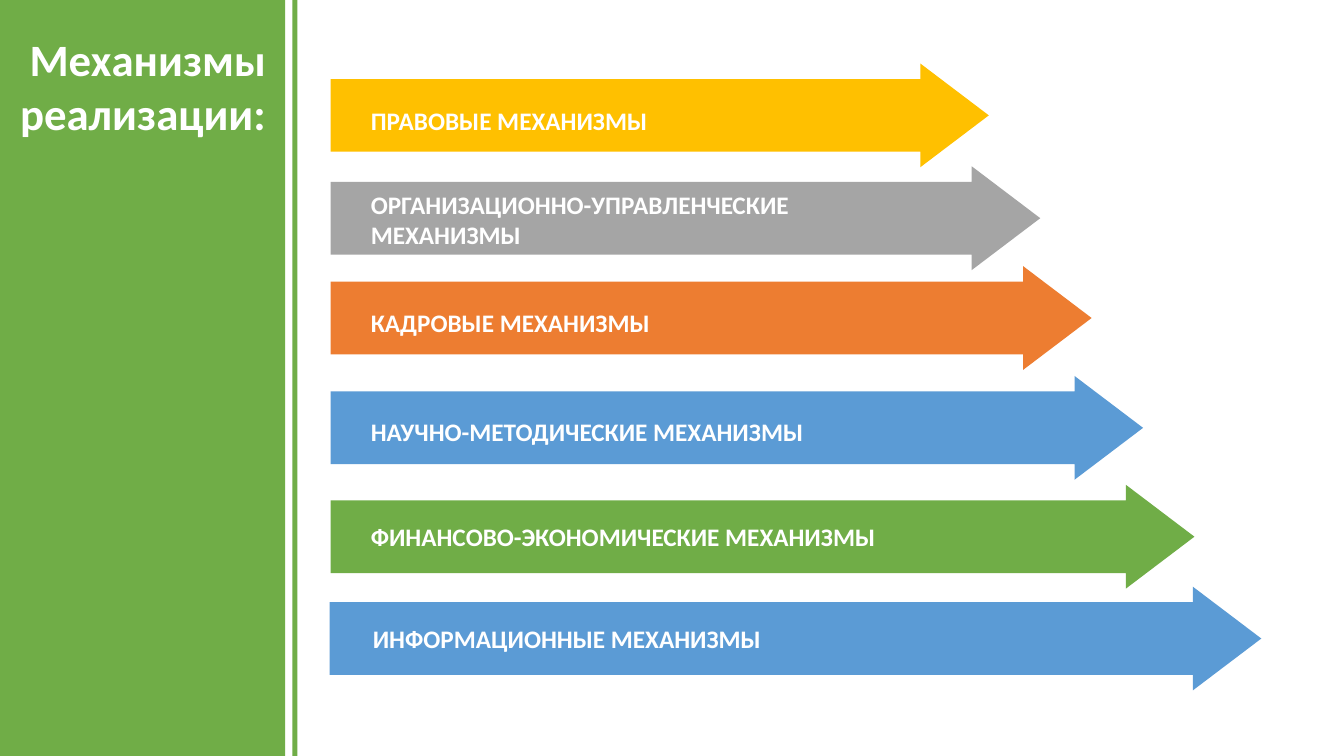
"""Build a slide of six stepped arrows beside a green title band."""
import pptx
import pptx.util
import pptx.dml.color
import pptx.enum.shapes
import pptx.enum.text
from dataclasses import dataclass

KIND = pptx.enum.shapes.MSO_SHAPE
ALIGN = pptx.enum.text.PP_ALIGN


@dataclass(frozen=True)
class Theme:
    font: str = "Calibri"
    head: int = 32
    body: int = 18
    white: str = "FFFFFF"
    gold: str = "FFC000"
    gray: str = "A5A5A5"
    rust: str = "ED7D31"
    blue: str = "5B9BD5"
    green: str = "70AD47"


class Board:
    def __init__(self, deck, theme, cols=40, rows=30):
        self.theme = theme
        self.slide = deck.slides.add_slide(deck.slide_layouts[6])
        self.col = deck.slide_width / cols
        self.row = deck.slide_height / rows

    def place(self, x, y, w, h):
        return [round(v) for v in (x * self.col, y * self.row, w * self.col, h * self.row)]

    def block(self, kind, box, fill):
        shape = self.slide.shapes.add_shape(kind, *self.place(*box))
        shape.shadow.inherit = False
        shape.fill.solid()
        shape.fill.fore_color.rgb = pptx.dml.color.RGBColor.from_string(fill)
        shape.line.fill.background()
        return shape

    def arrow(self, box, fill):
        shape = self.block(KIND.RIGHT_ARROW, box, fill)
        shape.adjustments[0] = 0.7
        shape.adjustments[1] = 0.66

    def text(self, words, box, size, align=ALIGN.LEFT):
        frame = self.slide.shapes.add_textbox(*self.place(*box)).text_frame
        frame.word_wrap = True
        frame.auto_size = pptx.enum.text.MSO_AUTO_SIZE.SHAPE_TO_FIT_TEXT
        frame.text = words
        para = frame.paragraphs[0]
        para.alignment = align
        font = para.runs[0].font
        font.name = self.theme.font
        font.size = pptx.util.Pt(size)
        font.bold = True
        font.color.rgb = pptx.dml.color.RGBColor.from_string(self.theme.white)


def main():
    deck = pptx.Presentation()
    deck.slide_width = pptx.util.Inches(13.33)
    deck.slide_height = pptx.util.Inches(7.5)
    theme = Theme()
    board = Board(deck, theme)

    for left, wide in ((0, 8.49), (8.7, 0.15)):
        board.block(KIND.RECTANGLE, (left, 0, wide, 30), theme.green)
    board.text("Механизмы реализации:", (-0.18, 1.08, 8.4, 4.72), theme.head, ALIGN.RIGHT)

    items = (
        ("ПРАВОВЫЕ МЕХАНИЗМЫ", theme.gold, 2.52, 4, 1.6),
        ("ОРГАНИЗАЦИОННО-УПРАВЛЕНЧЕСКИЕ МЕХАНИЗМЫ", theme.gray, 6.6, 7.32, 2.84),
        ("КАДРОВЫЕ МЕХАНИЗМЫ", theme.rust, 10.56, 12, 1.6),
        ("НАУЧНО-МЕТОДИЧЕСКИЕ МЕХАНИЗМЫ", theme.blue, 14.92, 16.32, 1.6),
        ("ФИНАНСОВО-ЭКОНОМИЧЕСКИЕ МЕХАНИЗМЫ", theme.green, 19.24, 20.48, 1.6),
        ("ИНФОРМАЦИОННЫЕ МЕХАНИЗМЫ", theme.blue, 23.28, 24.52, 1.6),
    )
    for step, (words, fill, top, line, tall) in enumerate(items):
        last = step == len(items) - 1
        left, wide, start = (9.81, 27.73, 10.8) if last else (9.84, 19.59 + 1.53 * step, 10.74)
        board.arrow((left, top, wide, 4.12), fill)
        board.text(words, (start, line, 16.89, tall), theme.body)

    deck.save("out.pptx")


if __name__ == "__main__":
    main()
